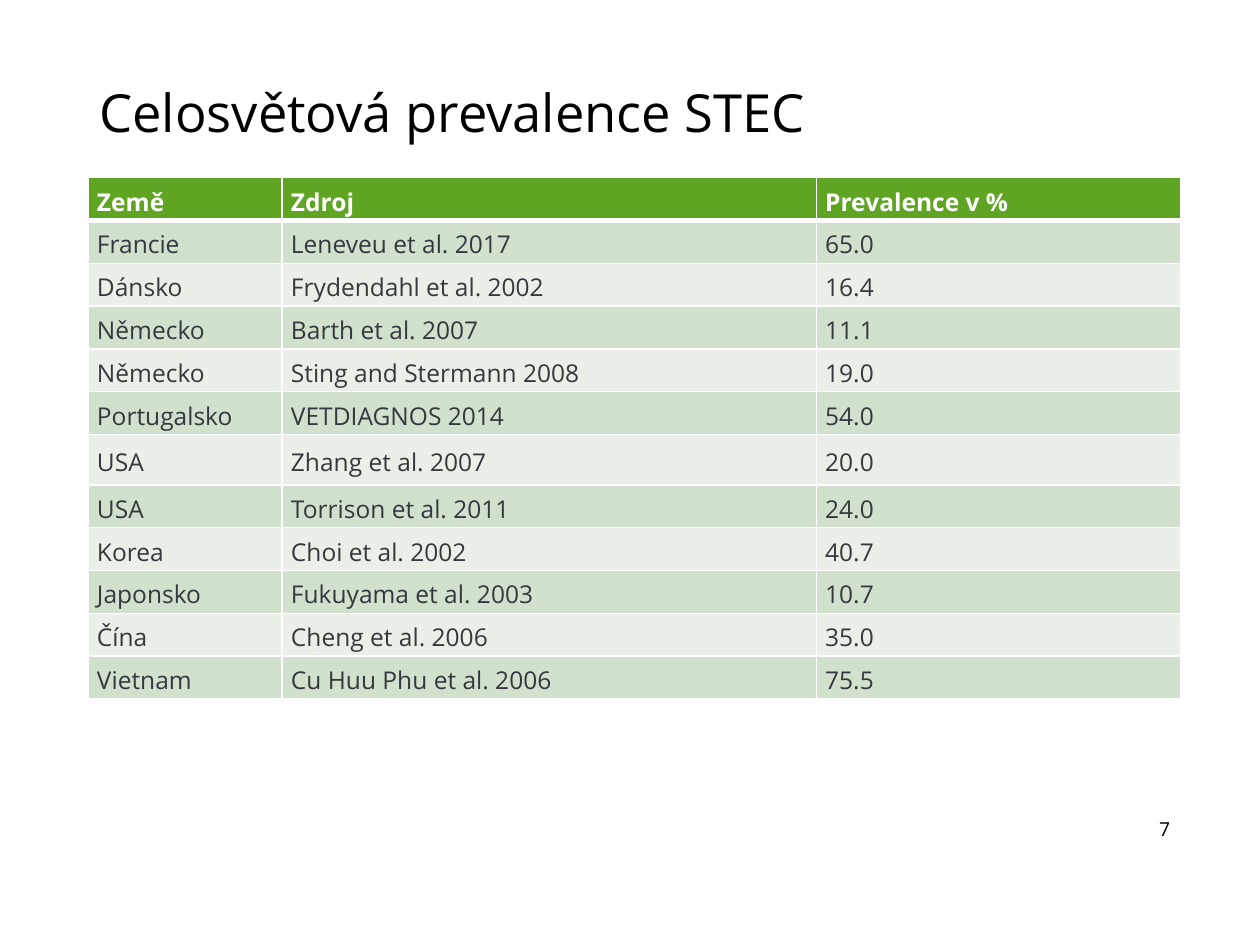
from lxml import etree
from pptx import Presentation
from pptx.dml.color import RGBColor
from pptx.enum import text
from pptx.oxml import ns
from pptx.util import Inches, Pt

FONT = "Open Sans"
BLACK = RGBColor(0x00, 0x00, 0x00)
WHITE = RGBColor(0xFF, 0xFF, 0xFF)
DARK_GREY = RGBColor(0x34, 0x39, 0x3E)
HEADER_GREEN = RGBColor(0x5F, 0xA5, 0x23)
BANDS = (RGBColor(0xEA, 0xF0, 0xE8), RGBColor(0xD2, 0xE1, 0xCD))

COLUMN_WIDTHS = (1.54, 4.24, 2.89)
ROW_HEIGHT = 0.34
TALL_ROW, TALL_HEIGHT = 6, 0.4
ROWS = (
    ("Země", "Zdroj", "Prevalence v %"),
    ("Francie", "Leneveu et al. 2017", "65.0"),
    ("Dánsko", "Frydendahl et al. 2002", "16.4"),
    ("Německo", "Barth et al. 2007", "11.1"),
    ("Německo", "Sting and Stermann 2008", "19.0"),
    ("Portugalsko", "VETDIAGNOS 2014", "54.0"),
    ("USA", "Zhang et al. 2007", "20.0"),
    ("USA", "Torrison et al. 2011", "24.0"),
    ("Korea", "Choi et al. 2002", "40.7"),
    ("Japonsko", "Fukuyama et al. 2003", "10.7"),
    ("Čína", "Cheng et al. 2006", "35.0"),
    ("Vietnam", "Cu Huu Phu et al. 2006", "75.5"),
)


def set_font(paragraph, size, color, bold=False):
    font = paragraph.font
    font.name, font.size, font.bold = FONT, Pt(size), bold
    font.color.rgb = color


def add_text(slide, left, top, width, height, words, size, margins):
    box = slide.shapes.add_textbox(
        Inches(left), Inches(top), Inches(width), Inches(height))
    frame = box.text_frame
    frame.word_wrap = True
    frame.vertical_anchor = text.MSO_ANCHOR.MIDDLE
    frame.margin_left = frame.margin_right = Inches(margins[0])
    frame.margin_top = frame.margin_bottom = Inches(margins[1])
    paragraph = frame.paragraphs[0]
    paragraph.text = words
    set_font(paragraph, size, BLACK)


def set_borders(cell, top, bottom):
    properties = cell._tc.get_or_add_tcPr()
    for side, width in (("L", 1), ("R", 1), ("T", top), ("B", bottom)):
        line = etree.SubElement(properties, ns.qn(f"a:ln{side}"), w=str(Pt(width)))
        fill = etree.SubElement(line, ns.qn("a:solidFill"))
        etree.SubElement(fill, ns.qn("a:srgbClr"), val=str(WHITE))


def fill_cell(cell, words, row):
    header = row == 0
    # Thick rule between the header and the body
    set_borders(cell, top=3 if row == 1 else 1, bottom=3 if header else 1)
    cell.fill.solid()
    cell.fill.fore_color.rgb = HEADER_GREEN if header else BANDS[row % 2]
    cell.vertical_anchor = text.MSO_ANCHOR.MIDDLE
    cell.margin_left = cell.margin_right = Inches(0.07)
    cell.margin_top = cell.margin_bottom = 0
    paragraph = cell.text_frame.paragraphs[0]
    paragraph.text = words
    paragraph.line_spacing = 1.15
    if row >= TALL_ROW:
        paragraph.space_after = Pt(10)
    set_font(paragraph, 14, WHITE if header else DARK_GREY, header)


def add_prevalence_table(slide, left, top):
    height = ROW_HEIGHT * (len(ROWS) - 1) + TALL_HEIGHT
    table = slide.shapes.add_table(
        len(ROWS), len(COLUMN_WIDTHS), Inches(left), Inches(top),
        Inches(sum(COLUMN_WIDTHS)), Inches(height)).table
    for column, width in zip(table.columns, COLUMN_WIDTHS):
        column.width = Inches(width)
    for row, entries in enumerate(ROWS):
        table.rows[row].height = Inches(
            TALL_HEIGHT if row == TALL_ROW else ROW_HEIGHT)
        for column, words in enumerate(entries):
            fill_cell(table.cell(row, column), words, row)


def main():
    presentation = Presentation()
    presentation.slide_width, presentation.slide_height = Inches(10), Inches(7.5)
    slide = presentation.slides.add_slide(presentation.slide_layouts[6])

    # Page number
    add_text(slide, 9.2, 6.48, 0.39, 0.19, "7", 11, (0, 0))
    # Title
    add_text(slide, 0.69, 0.55, 8.64, 0.67,
             "Celosvětová prevalence STEC", 30, (0.1, 0.05))
    # Prevalence by country
    add_prevalence_table(slide, 0.7, 1.41)

    presentation.save("out.pptx")


if __name__ == "__main__":
    main()
